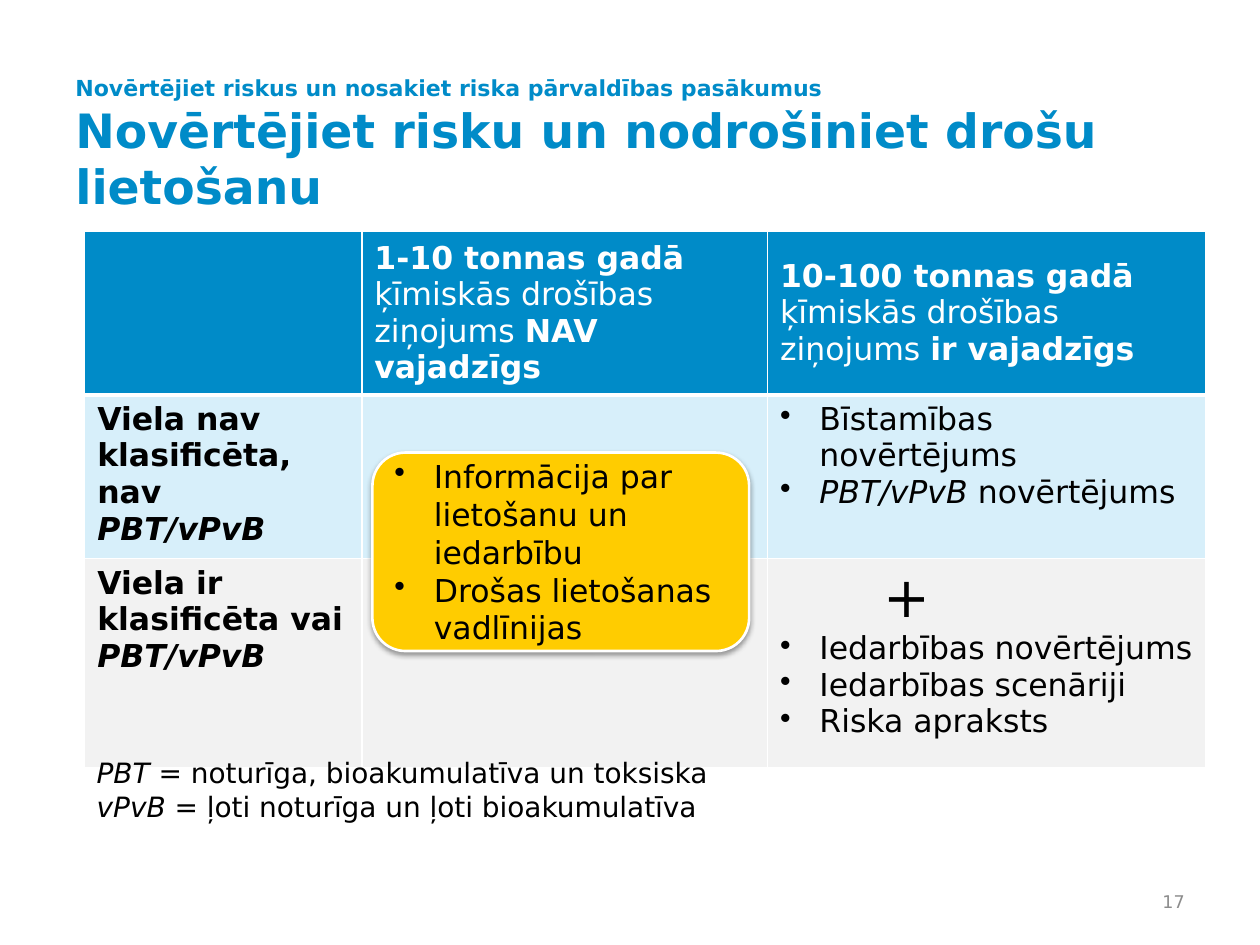
import pptx
import pptx.util
import pptx.dml.color
import pptx.enum.shapes
import pptx.enum.text
import pptx.oxml
import pptx.oxml.ns

Pt = pptx.util.Pt
RGB = pptx.dml.color.RGBColor
ALIGN = pptx.enum.text.PP_ALIGN
ANCHOR = pptx.enum.text.MSO_ANCHOR

FONT = "DejaVu Sans"
BLUE = RGB(0x00, 0x8B, 0xC8)
PALE = RGB(0xD7, 0xEF, 0xFA)
LIGHT = RGB(0xF2, 0xF2, 0xF2)
GOLD = RGB(0xFF, 0xCC, 0x00)
GREY = RGB(0x8C, 0x8C, 0x8C)
WHITE = RGB(0xFF, 0xFF, 0xFF)
BLACK = RGB(0x00, 0x00, 0x00)
HANG = Pt(22.5)


def make_xml(tag, body="", attrs=""):
    space = pptx.oxml.ns.nsdecls("a")
    return pptx.oxml.parse_xml(f"<a:{tag} {space} {attrs}>{body}</a:{tag}>")


def add_para(para, parts, size=18, color=BLACK, bullet=False, indent=0):
    """Each part is (text, style); style holds b for bold, i for italic."""
    props = para._p.get_or_add_pPr()
    if bullet:
        props.set("marL", str(HANG))
        props.set("indent", str(-HANG))
        props.append(make_xml("buChar", attrs='char="•"'))
    elif indent:
        props.set("marL", str(Pt(indent)))
        props.set("indent", "0")
    for text, style in parts:
        run = para.add_run()
        run.text = text
        font = run.font
        font.name, font.size = FONT, Pt(size)
        font.bold, font.italic = "b" in style, "i" in style
        font.color.rgb = color


def fill_text(frame, paras, **common):
    """Each para is (parts, options)."""
    for num, (parts, opts) in enumerate(paras):
        para = frame.add_paragraph() if num else frame.paragraphs[0]
        add_para(para, parts, **{**common, **opts})


def add_text(slide, box, paras, anchor=ANCHOR.TOP, **common):
    frame = slide.shapes.add_textbox(*map(Pt, box)).text_frame
    frame.word_wrap = True
    frame.vertical_anchor = anchor
    fill_text(frame, paras, **common)
    return frame


def style_cell(cell, fill, base):
    cell.fill.solid()
    cell.fill.fore_color.rgb = fill
    props = cell._tc.get_or_add_tcPr()
    paint = f'<a:solidFill><a:srgbClr val="{WHITE}"/></a:solidFill>'
    widths = {"lnL": 1, "lnR": 1, "lnT": 1, "lnB": base}
    for num, (side, width) in enumerate(widths.items()):
        props.insert(num, make_xml(side, paint, f'w="{Pt(width)}"'))


def add_grid(slide, box, cols, rows, cells):
    table = slide.shapes.add_table(len(rows), len(cols), *map(Pt, box)).table
    for col, width in zip(table.columns, cols):
        col.width = Pt(width)
    fills = (BLUE, PALE, LIGHT)
    for num, (row, height) in enumerate(zip(table.rows, rows)):
        row.height = Pt(height)
        head = num == 0
        for cell, paras in zip(row.cells, cells[num]):
            cell.vertical_anchor = ANCHOR.MIDDLE if head else ANCHOR.TOP
            fill_text(cell.text_frame, paras, color=WHITE if head else BLACK)
            style_cell(cell, fills[num], 3 if head else 1)


def add_card(slide, box, paras):
    kind = pptx.enum.shapes.MSO_SHAPE.ROUNDED_RECTANGLE
    card = slide.shapes.add_shape(kind, *map(Pt, box))
    card.fill.solid()
    card.fill.fore_color.rgb = GOLD
    card.line.color.rgb = WHITE
    card.line.width = Pt(1.5)
    # Soft shadow straight below
    shade = (f'<a:outerShdw blurRad="{Pt(3.1)}" dist="{Pt(1.6)}" dir="5400000" '
             'rotWithShape="0"><a:srgbClr val="000000"><a:alpha val="38000"/>'
             '</a:srgbClr></a:outerShdw>')
    card._element.spPr.append(make_xml("effectLst", shade))
    frame = card.text_frame
    frame.word_wrap = True
    frame.vertical_anchor = ANCHOR.MIDDLE
    fill_text(frame, paras)
    for para in frame.paragraphs:
        para.alignment = ALIGN.LEFT


def line(*parts, **opts):
    return parts, opts


def item(*parts):
    return line(*parts, bullet=True)


def main():
    deck = pptx.Presentation()
    deck.slide_width, deck.slide_height = Pt(720), Pt(540)
    slide = deck.slides.add_slide(deck.slide_layouts[6])

    # Page number
    page = add_text(slide, (516, 500.5, 168, 28.8), [line(("17", ""))],
                    ANCHOR.MIDDLE, size=10, color=GREY)
    page.paragraphs[0].alignment = ALIGN.RIGHT

    # Title
    add_text(slide, (36, 37.5, 648, 90), [
        line(("Novērtējiet riskus un nosakiet riska pārvaldības pasākumus", "b"),
             size=12.6),
        line(("Novērtējiet risku un nodrošiniet drošu lietošanu", "b"), size=27),
    ], ANCHOR.MIDDLE, color=BLUE)

    # Table of duties by tonnage
    report = ("ķīmiskās drošības ziņojums ", "")
    acronym = line(("PBT/vPvB", "bi"))
    cells = [
        [[],
         [line(("1-10\u00a0tonnas gadā", "b")),
          line(report, ("NAV vajadzīgs", "b"))],
         [line(("10-100\u00a0tonnas gadā ", "b"), report,
               ("ir vajadzīgs", "b"))]],
        [[line(("Viela nav klasificēta, nav", "b")), acronym],
         [],
         [item(("Bīstamības novērtējums", "")),
          item(("PBT/vPvB", "i"), (" novērtējums", ""))]],
        [[line(("Viela ir klasificēta vai", "b")), acronym],
         [],
         [line(("+", ""), size=32, indent=59),
          item(("Iedarbības novērtējums", "")),
          item(("Iedarbības scenāriji", "")),
          item(("Riska apraksts", ""))]],
    ]
    add_grid(slide, (48.4, 132, 640.8, 275.8), (158.4, 231.8, 250.6),
             (73.4, 82.8, 119.5), cells)

    # Key to the acronyms
    add_text(slide, (48.2, 428.4, 520, 46), [
        line(("PBT", "i"), (" = noturīga, bioakumulatīva un toksiska", "")),
        line(("vPvB", "i"), (" = ļoti noturīga un ļoti bioakumulatīva", "")),
    ], size=16)

    # Card across both middle cells
    add_card(slide, (212.8, 258.6, 215.3, 113.4), [
        item(("Informācija par lietošanu un iedarbību", "")),
        item(("Drošas lietošanas vadlīnijas", "")),
    ])

    deck.save("out.pptx")


if __name__ == "__main__":
    main()
